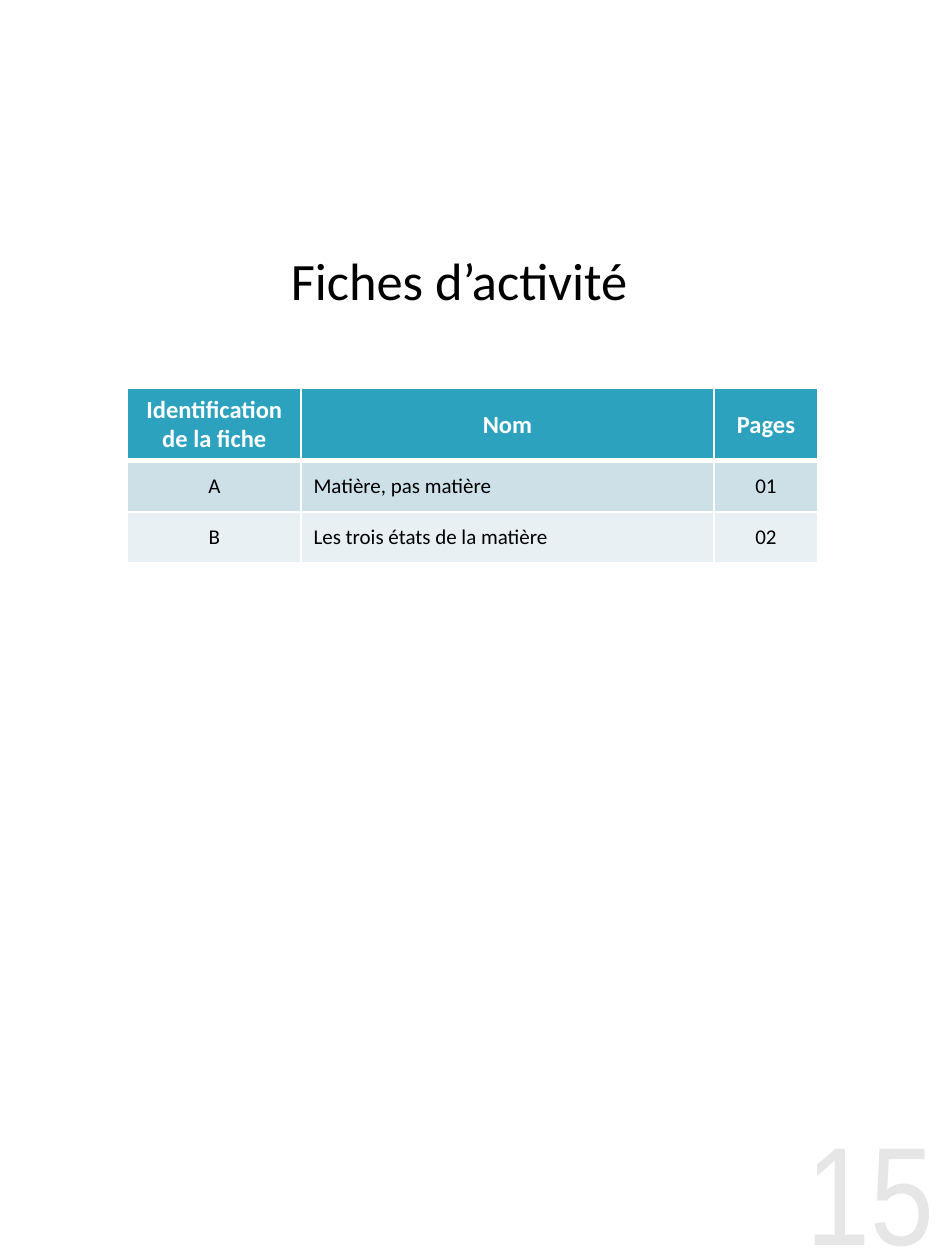
import pptx
import pptx.util
import pptx.dml.color
import pptx.enum.text
from dataclasses import dataclass
from lxml import etree
from pptx.oxml.ns import qn

Pt = pptx.util.Pt
RGB = pptx.dml.color.RGBColor.from_string
ALIGN = pptx.enum.text.PP_ALIGN
ANCHOR = pptx.enum.text.MSO_ANCHOR


@dataclass(frozen=True)
class Theme:
    font: str = "Calibri"
    number_font: str = "Arial Narrow"
    text: str = "000000"
    white: str = "FFFFFF"
    header: str = "2DA2BF"
    bands: tuple = ("CDE0E8", "E8F0F4")
    number: str = "E6E6E6"
    title_size: int = 30
    header_size: int = 14
    body_size: int = 12
    number_size: int = 80


THEME = Theme()
HEADERS = ["Identification\nde la fiche", "Nom", "Pages"]
SHEETS = [["A", "Matière, pas matière", "01"],
          ["B", "Les trois états de la matière", "02"]]
COLUMN_WIDTHS = [99, 236, 59.5]
ROW_HEIGHTS = [41, 29.2, 29.2]


def set_attrs(obj, **values):
    for name, value in values.items():
        setattr(obj, name, value)


def write(tf, text, size, color, align, font=THEME.font, bold=False):
    tf.text = text
    for p in tf.paragraphs:
        p.alignment = align
        for r in p.runs:
            set_attrs(r.font, name=font, size=Pt(size), bold=bold)
            r.font.color.rgb = RGB(color)


def add_title(s, text, left, top, width, height):
    sp = s.shapes.title
    set_attrs(sp, left=Pt(left), top=Pt(top), width=Pt(width), height=Pt(height))
    set_attrs(sp.text_frame, word_wrap=False, vertical_anchor=ANCHOR.TOP,
              auto_size=pptx.enum.text.MSO_AUTO_SIZE.NONE)
    write(sp.text_frame, text, THEME.title_size, THEME.text, ALIGN.LEFT)


def set_borders(cell, **widths):
    """Draw white cell edges; the widths are keyed by L, R, T and B."""
    tc_pr = cell._tc.get_or_add_tcPr()
    for side, width in widths.items():
        ln = etree.SubElement(tc_pr, qn(f"a:ln{side}"), w=str(Pt(width)))
        fill = etree.SubElement(ln, qn("a:solidFill"))
        etree.SubElement(fill, qn("a:srgbClr"), val=THEME.white)


def add_sheet_table(s, left, top):
    rows = [HEADERS] + SHEETS
    frame = s.shapes.add_table(len(rows), len(HEADERS), Pt(left), Pt(top),
                               Pt(sum(COLUMN_WIDTHS)), Pt(sum(ROW_HEIGHTS)))
    table = frame.table
    for column, width in zip(table.columns, COLUMN_WIDTHS):
        column.width = Pt(width)
    for i, (row, height) in enumerate(zip(rows, ROW_HEIGHTS)):
        table.rows[i].height = Pt(height)
        header = i == 0
        fill = THEME.header if header else THEME.bands[(i - 1) % 2]
        size = THEME.header_size if header else THEME.body_size
        color = THEME.white if header else THEME.text
        for j, text in enumerate(row):
            cell = table.cell(i, j)
            cell.vertical_anchor = ANCHOR.MIDDLE
            # A thick rule separates the header from the body
            set_borders(cell, L=1, R=1, T=3 if i == 1 else 1, B=3 if header else 1)
            cell.fill.solid()
            cell.fill.fore_color.rgb = RGB(fill)
            align = ALIGN.LEFT if j == 1 and not header else ALIGN.CENTER
            write(cell.text_frame, text, size, color, align, bold=header)


def add_page_number(s, text, left, top, width, height):
    tf = s.shapes.add_textbox(Pt(left), Pt(top), Pt(width), Pt(height)).text_frame
    set_attrs(tf, word_wrap=True, margin_left=0, margin_right=0,
              margin_top=0, margin_bottom=0)
    write(tf, text, THEME.number_size, THEME.number, ALIGN.RIGHT,
          font=THEME.number_font)


def main():
    prs = pptx.Presentation()
    set_attrs(prs, slide_width=Pt(540), slide_height=Pt(720))
    s = prs.slides.add_slide(prs.slide_layouts[5])

    # Table of activity sheets
    add_sheet_table(s, 73, 222)

    # Heading and page number
    add_title(s, "Fiches d’activité", 159, 138, 216, 44)
    add_page_number(s, "15", 433, 632, 101, 88)

    prs.save("out.pptx")


if __name__ == "__main__":
    main()
